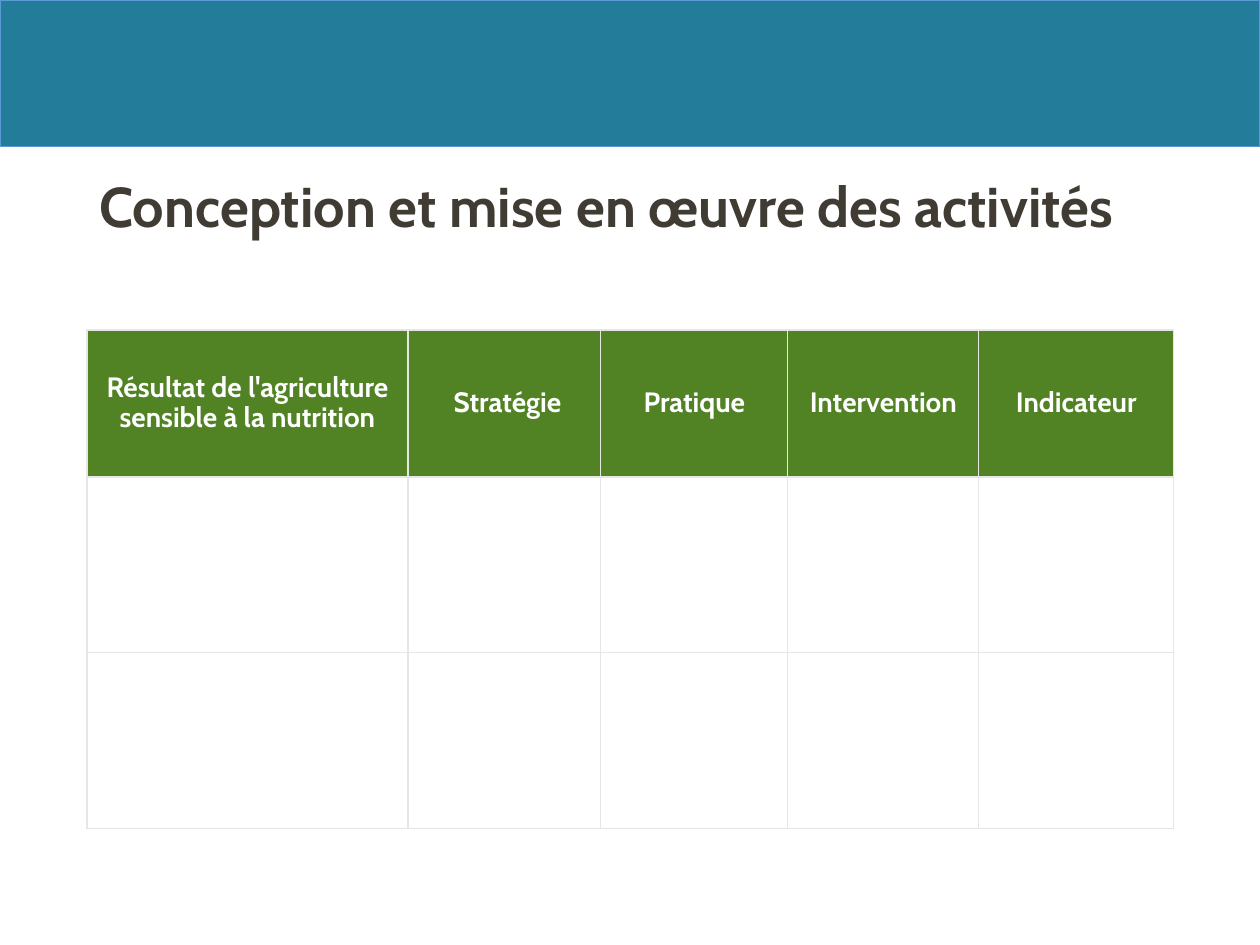
"""Build a slide with a title and an empty activity planning table."""
from lxml import etree
from pptx import Presentation
from pptx import util as u
from pptx.dml.color import RGBColor
from pptx.enum import shapes, text
from pptx.oxml.ns import qn


def px(n):
    return u.Emu(round(n * 914400 / 126))


def color(code):
    return RGBColor.from_string(code)


def write(frame, words, font="Cabin", size=16, ink="FFFFFF", bold=True,
          align=text.PP_ALIGN.CENTER):
    par = frame.paragraphs[0]
    par.alignment = align
    par.line_spacing = 0.9
    run = par.add_run()
    run.text = words
    run.font.name = font
    run.font.size = u.Pt(size)
    run.font.bold = bold
    run.font.color.rgb = color(ink)


class Deck:
    teal, blue, green, grey, dark = "237C9A", "5B9BD5", "518325", "E7E6E6", "403B33"

    def __init__(self):
        self.file = Presentation()
        self.file.slide_width, self.file.slide_height = px(1260), px(945)
        self.slide = self.file.slides.add_slide(self.file.slide_layouts[6])

    def band(self, *box):
        bar = self.slide.shapes.add_shape(
            shapes.MSO_SHAPE.RECTANGLE, *map(px, box))
        bar.shadow.inherit = False
        bar.fill.solid()
        bar.fill.fore_color.rgb = color(self.teal)
        bar.line.color.rgb = color(self.blue)
        bar.line.width = u.Pt(0.5)

    def title(self, words, *box):
        frame = self.slide.shapes.add_textbox(*map(px, box)).text_frame
        frame.word_wrap = True
        write(frame, words, size=32, ink=self.dark, align=text.PP_ALIGN.LEFT)

    def border(self, cell):
        props = cell._tc.get_or_add_tcPr()
        for at, side in enumerate(("lnL", "lnR", "lnT", "lnB")):
            line = etree.Element(qn("a:" + side), w=str(u.Pt(0.75)))
            fill = etree.SubElement(line, qn("a:solidFill"))
            etree.SubElement(fill, qn("a:srgbClr"), val=self.grey)
            props.insert(at, line)

    def table(self, heads, left, top, wide, high):
        grid = self.slide.shapes.add_table(
            len(high), len(wide), px(left), px(top),
            px(sum(wide)), px(sum(high))).table
        for col, size in zip(grid.columns, wide):
            col.width = px(size)
        for row, size in zip(grid.rows, high):
            row.height = px(size)
        for cell in grid.iter_cells():
            cell.fill.background()
            self.border(cell)
        for cell, head in zip(grid.rows[0].cells, heads):
            cell.fill.solid()
            cell.fill.fore_color.rgb = color(self.green)
            cell.vertical_anchor = text.MSO_ANCHOR.MIDDLE
            cell.margin_left = cell.margin_right = px(9)
            cell.margin_top = cell.margin_bottom = px(6)
            write(cell.text_frame, head)


def main():
    deck = Deck()
    deck.band(0, 0, 1260, 147)
    deck.title("Conception et mise en œuvre des activités", 87, 173, 1086, 130)
    heads = ("Résultat de l'agriculture sensible à la nutrition",
             " Stratégie", "Pratique", "Intervention", "Indicateur")
    deck.table(heads, 87, 330, (321, 193, 187, 191, 195), (147, 176, 176))
    deck.file.save("out.pptx")


if __name__ == "__main__":
    main()
